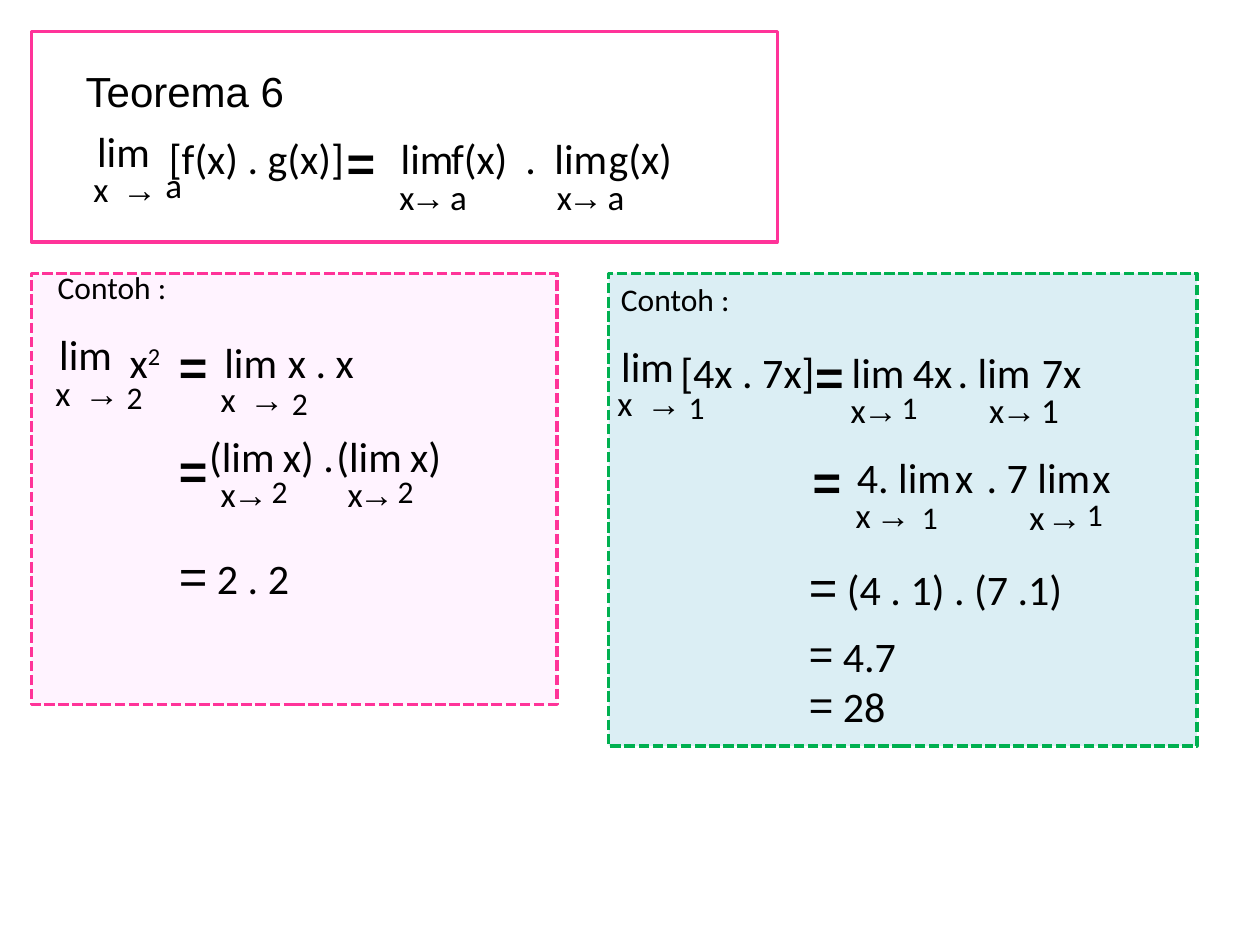
from lxml import etree
from pptx import Presentation
from pptx.dml.color import RGBColor
from pptx.enum.dml import MSO_LINE
from pptx.enum.shapes import MSO_SHAPE
from pptx.enum.text import MSO_ANCHOR, MSO_AUTO_SIZE, PP_ALIGN
from pptx.oxml.ns import qn
from pptx.util import Inches, Pt

DASH = MSO_LINE.SQUARE_DOT
RECTANGLE = MSO_SHAPE.RECTANGLE
TOP = MSO_ANCHOR.TOP
LEFT = PP_ALIGN.LEFT
FIT = MSO_AUTO_SIZE.SHAPE_TO_FIT_TEXT
NO_FIT = MSO_AUTO_SIZE.NONE

COLORS = {"text": "000000", "pink": "FF3399", "blush": "FFF3FF",
          "green": "00B050", "sky": "DBEEF4"}
HEIGHTS = {18: 0.3, 20: 0.34, 24: 0.4, 28: 0.47}

deck = Presentation()
deck.slide_width, deck.slide_height = Inches(10), Inches(7.5)
page = deck.slides.add_slide(deck.slide_layouts[5])


def add_span(para, text, size, font="Calibri", bold=False):
    span = para.add_run()
    span.text = text
    span.font.size = Pt(size)
    span.font.name = font
    span.font.bold = bold
    span.font.color.rgb = RGBColor.from_string(COLORS["text"])
    return span


def add_text(left, top, width, text, size, font="Calibri", bold=False, pad=(0, 0)):
    """Place one line of text and return its paragraph."""
    box = page.shapes.add_textbox(Inches(left), Inches(top), Inches(width),
                                  Inches(HEIGHTS[size] + 2 * pad[1]))
    frame = box.text_frame
    frame.margin_left = frame.margin_right = Inches(pad[0])
    frame.margin_top = frame.margin_bottom = Inches(pad[1])
    frame.word_wrap = False
    frame.auto_size = FIT
    para = frame.paragraphs[0]
    add_span(para, text, size, font, bold)
    return para


# Frames: left, top, width, height, fill, line, dashed
frames = [
    (0.25, 0.25, 5.92, 1.67, None, "pink", False),
    (0.25, 2.17, 4.17, 3.42, "blush", "pink", True),
    (4.83, 2.17, 4.67, 3.75, "sky", "green", True),
]
for left, top, width, height, fill, line, dashed in frames:
    frame = page.shapes.add_shape(RECTANGLE, Inches(left), Inches(top),
                                  Inches(width), Inches(height))
    frame.shadow.inherit = False
    if fill:
        frame.fill.solid()
        frame.fill.fore_color.rgb = RGBColor.from_string(COLORS[fill])
    else:
        frame.fill.background()
    frame.line.color.rgb = RGBColor.from_string(COLORS[line])
    frame.line.width = Pt(2)
    if dashed:
        frame.line.dash_style = DASH

# Title
title = page.shapes.title
title.left, title.top = Inches(0.58), Inches(0.47)
title.width, title.height = Inches(2.83), Inches(0.55)
title.text_frame.vertical_anchor = TOP
title.text_frame.auto_size = NO_FIT
title_para = title.text_frame.paragraphs[0]
title_para.alignment = LEFT
add_span(title_para, "Teorema 6", 24, "Arial")

# Example headings
for left, top in [(0.36, 2.08), (4.83, 2.17)]:
    add_text(left, top, 1.08, "Contoh :", 18, pad=(0.1, 0.05))

# Terms of the formulas: left, top, width, text
terms = [
    # Theorem
    (0.77, 1, 1.01, "lim"), (1.34, 1.05, 1.42, "[f(x) . g(x)]"),
    (3.18, 1.05, 0.45, "lim"), (3.58, 1.05, 0.5, "f(x)"),
    (4.17, 1.05, 0.12, "."), (4.4, 1.05, 0.45, "lim"), (4.83, 1.05, 0.55, "g(x)"),
    # Left example
    (0.47, 2.61, 1.01, "lim"), (1.78, 2.67, 1.01, "lim"), (2.21, 2.67, 0.7, " x . x"),
    (1.66, 3.42, 0.68, "(lim"), (2.17, 3.42, 0.6, " x) ."),
    (2.67, 3.42, 0.68, "(lim"), (3.18, 3.42, 0.45, " x)"),
    # Right example
    (4.93, 2.7, 1.01, "lim"), (5.4, 2.75, 1.1, "[4x . 7x]"),
    (6.76, 2.75, 0.45, "lim"), (7.17, 2.75, 0.45, " 4x"),
    (7.6, 2.75, 0.93, ". lim"), (8.27, 2.75, 0.4, "7x"),
    (6.8, 3.58, 0.95, "4. lim"), (7.58, 3.58, 0.58, "x"),
    (7.83, 3.58, 1.01, ". 7 lim"), (8.67, 3.58, 0.2, "x"),
]
for left, top, width, text in terms:
    add_text(left, top, width, text, 24)

square = add_text(1.03, 2.67, 0.3, "x", 24)
power = add_span(square, "2", 24)
power.font._element.set("baseline", "30000")

# Conditions under each lim: left, top, x width, arrow width,
# arrow offset, target offset, target drop, target, target size
conditions = [
    (0.74, 1.33, 0.29, 0.66, 0.23, 0.51, -0.03, " a", 20),
    (3.17, 1.39, 0.15, 0.3, 0.09, 0.34, 0, " a", 20),
    (4.42, 1.39, 0.15, 0.3, 0.09, 0.34, 0, " a", 20),
    (0.44, 2.95, 0.29, 0.66, 0.23, 0.51, 0.05, " 2", 18),
    (1.75, 3, 0.29, 0.66, 0.23, 0.51, 0.05, " 2", 18),
    (1.75, 3.75, 0.15, 0.3, 0.1, 0.35, 0, " 2", 18),
    (2.76, 3.75, 0.15, 0.3, 0.09, 0.34, 0, " 2", 18),
    (4.9, 3.03, 0.29, 0.66, 0.23, 0.51, 0.05, " 1", 18),
    (6.75, 3.08, 0.15, 0.3, 0.1, 0.35, 0, " 1", 18),
    (7.85, 3.08, 0.15, 0.3, 0.1, 0.35, 0, " 1", 20),
    (6.79, 3.92, 0.15, 0.3, 0.16, 0.47, 0.03, " 1", 18),
    (8.17, 3.93, 0.15, 0.3, 0.14, 0.4, 0, " 1", 18),
]
for left, top, x_width, arrow_width, arrow, offset, drop, target, size in conditions:
    add_text(left, top, x_width, "x", 20)
    add_text(left + arrow, top, arrow_width, "→", 20, "Arial", True)
    add_text(left + offset, top + drop, 0.3, target, size)

# Bold equals signs
for left, top in [(2.75, 1.05), (1.42, 2.67), (1.42, 3.5), (6.47, 2.75), (6.45, 3.58)]:
    add_text(left, top, 0.51, "=", 28, "Arial", True)

# Evaluated products
for left, top, product in [(1.42, 4.33, " 2 . 2"), (6.42, 4.42, " (4 . 1) . (7 .1)")]:
    add_span(add_text(left, top, 2.67, "=", 28, "Arial"), product, 24)

# Final results, with equals signs as bullets
results = page.shapes.add_textbox(Inches(6.42), Inches(5), Inches(2.67), Inches(0.81))
frame = results.text_frame
frame.margin_left = frame.margin_right = frame.margin_top = frame.margin_bottom = 0
frame.word_wrap = True
frame.auto_size = FIT
for para, result in [(frame.paragraphs[0], " 4.7"), (frame.add_paragraph(), " 28")]:
    add_span(para, result, 24)
    properties = para._p.get_or_add_pPr()
    properties.set("marL", "0")
    properties.set("indent", "0")
    etree.SubElement(properties, qn("a:buFont"), typeface="Arial")
    etree.SubElement(properties, qn("a:buChar"), char="=")

deck.save("out.pptx")
